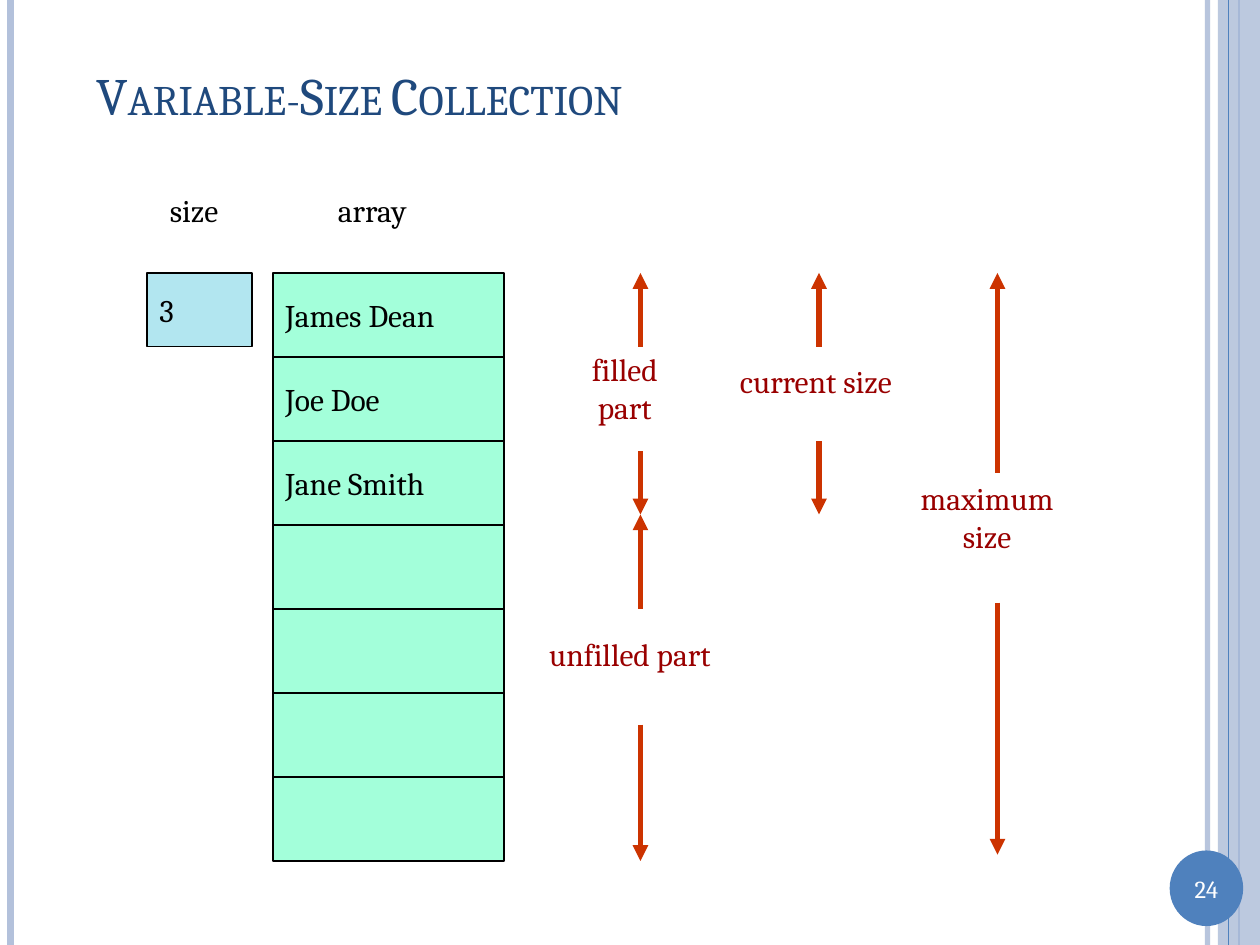
from typing import NamedTuple, Optional

from lxml.etree import SubElement
from pptx import Presentation
from pptx.dml.color import RGBColor
from pptx.enum.shapes import MSO_CONNECTOR, MSO_SHAPE
from pptx.enum.text import MSO_ANCHOR, PP_ALIGN
from pptx.oxml.ns import qn
from pptx.util import Inches, Pt

BLACK = RGBColor(0x00, 0x00, 0x00)
WHITE = RGBColor(0xFF, 0xFF, 0xFF)
PALE_BLUE = RGBColor(0xB3, 0xC1, 0xDB)
BLUE = RGBColor(0x4F, 0x81, 0xBD)
NAVY = RGBColor(0x1F, 0x49, 0x7D)
SKY = RGBColor(0xB2, 0xE6, 0xF0)
MINT = RGBColor(0xA3, 0xFF, 0xDA)
DARK_RED = RGBColor(0x99, 0x00, 0x00)
ORANGE_RED = RGBColor(0xCC, 0x33, 0x00)

FONT = "Cambria"
COLUMNS, ROWS = 120, 90
UNIT = Inches(10) / COLUMNS
CELL_COUNT = 7
ARRAY_TOP, CELL_HEIGHT = 26, 8
FILLED_END = 49


class Area(NamedTuple):
    left: float
    top: float
    width: float
    height: float


class Label(NamedTuple):
    text: str
    area: Area
    color: RGBColor = DARK_RED
    size: int = 18
    align: PP_ALIGN = PP_ALIGN.CENTER


class Rule(NamedTuple):
    column: float
    color: RGBColor
    weight: float
    opacity: int = 100


class Arrow(NamedTuple):
    column: float
    start: float
    tip: float


RULES_BEHIND = [
    Rule(115, PALE_BLUE, 3, 93),
    Rule(1, PALE_BLUE, 4.5),
    Rule(118, BLUE, 1.5),
]
RULE_IN_FRONT = Rule(117, BLUE, 0.75)
NAMES = ["James Dean", "Joe Doe", "Jane Smith"]
LABELS = [
    Label("size", Area(15, 17, 8.7, 6), BLACK, align=PP_ALIGN.LEFT),
    Label("array", Area(31, 17, 10.7, 6), BLACK, align=PP_ALIGN.LEFT),
    Label("filled part", Area(53, 32.7, 13, 8.5)),
    Label("unfilled part", Area(51, 58, 18, 8.5)),
    Label("current size", Area(69, 32, 17.4, 8.5)),
    Label("maximum size", Area(84, 45, 20, 8.5)),
]
ARROWS = [
    Arrow(61, 33, ARRAY_TOP),
    Arrow(61, 43, FILLED_END),
    Arrow(61, 58, FILLED_END),
    Arrow(61, 69, 82),
    Arrow(78, 33, ARRAY_TOP),
    Arrow(78, 42, FILLED_END),
    Arrow(95, 45, ARRAY_TOP),
    Arrow(95, 57.4, 81.4),
]


def grid(count: float) -> int:
    return round(count * UNIT)


def set_opacity(properties, percent: int) -> None:
    color = next(properties.iter(qn("a:srgbClr")))
    SubElement(color, qn("a:alpha")).set("val", str(percent * 1000))


def write_text(shape, text: str, size: int, color: RGBColor, align: PP_ALIGN):
    frame = shape.text_frame
    frame.word_wrap = True
    frame.vertical_anchor = MSO_ANCHOR.MIDDLE
    frame.text = text
    para = frame.paragraphs[0]
    para.alignment = align
    span = para.runs[0]
    span.font.name = FONT
    span.font.size = Pt(size)
    span.font.color.rgb = color
    return span


def draw_label(page, label: Label):
    box = page.shapes.add_textbox(*map(grid, label.area))
    return write_text(box, label.text, label.size, label.color, label.align)


def draw_shape(page, kind: MSO_SHAPE, area: Area, fill: RGBColor,
               outline: Optional[RGBColor] = None):
    shape = page.shapes.add_shape(kind, *map(grid, area))
    shape.shadow.inherit = False
    shape.fill.solid()
    shape.fill.fore_color.rgb = fill
    if outline is None:
        shape.line.fill.background()
    else:
        shape.line.color.rgb = outline
        shape.line.width = Pt(0.75)
    return shape


def draw_cell(page, area: Area, fill: RGBColor, text: str) -> None:
    cell = draw_shape(page, MSO_SHAPE.RECTANGLE, area, fill, BLACK)
    if text:
        write_text(cell, text, 18, BLACK, PP_ALIGN.LEFT)


def draw_vertical(page, column: float, start: float, end: float,
                  color: RGBColor, weight: float):
    line = page.shapes.add_connector(
        MSO_CONNECTOR.STRAIGHT, grid(column), grid(start), grid(column), grid(end))
    line.line.color.rgb = color
    line.line.width = Pt(weight)
    SubElement(line._element.spPr, qn("a:effectLst"))
    return line


def draw_rule(page, rule: Rule) -> None:
    line = draw_vertical(page, rule.column, 0, ROWS, rule.color, rule.weight)
    if rule.opacity < 100:
        set_opacity(line._element.spPr, rule.opacity)


def draw_arrow(page, arrow: Arrow) -> None:
    line = draw_vertical(page, arrow.column, arrow.start, arrow.tip, ORANGE_RED, 3)
    SubElement(line.line._get_or_add_ln(), qn("a:tailEnd")).set("type", "triangle")


def draw_frame(page) -> None:
    for rule in RULES_BEHIND:
        draw_rule(page, rule)
    band = draw_shape(page, MSO_SHAPE.RECTANGLE, Area(116, 0, 4, ROWS), PALE_BLUE)
    set_opacity(band._element.spPr, 87)
    draw_rule(page, RULE_IN_FRONT)
    draw_shape(page, MSO_SHAPE.OVAL, Area(111.4, 81, 7, 7.2), BLUE)
    draw_label(page, Label("24", Area(111.4, 82.6, 7, 4), WHITE, 14))


def main() -> None:
    deck = Presentation()
    deck.slide_width, deck.slide_height = Inches(10), Inches(7.5)
    page = deck.slides.add_slide(deck.slide_layouts[6])
    draw_frame(page)
    title = draw_label(page, Label("Variable-Size Collection", Area(8, 4, 102, 10),
                                   NAVY, 30, PP_ALIGN.LEFT))
    title.font._element.set("cap", "small")
    draw_cell(page, Area(14, ARRAY_TOP, 10, 7), SKY, "3")
    for index in range(CELL_COUNT):
        top = ARRAY_TOP + index * CELL_HEIGHT
        text = NAMES[index] if index < len(NAMES) else ""
        draw_cell(page, Area(26, top, 22, CELL_HEIGHT), MINT, text)
    for label in LABELS:
        draw_label(page, label)
    for arrow in ARROWS:
        draw_arrow(page, arrow)
    deck.save("out.pptx")


if __name__ == "__main__":
    main()
